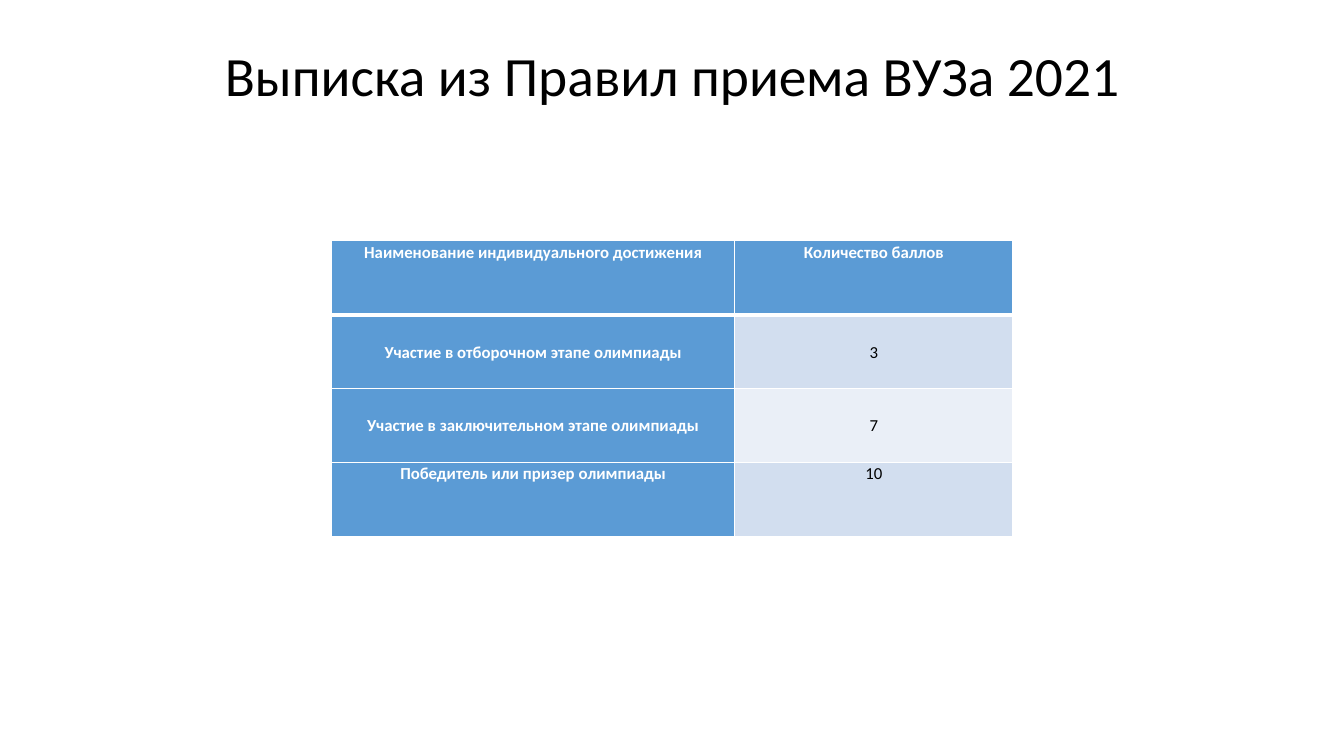
import pptx
import pptx.util
import pptx.dml.color
import pptx.enum.text
import pptx.oxml
import pptx.oxml.ns

# Content
TITLE = "Выписка из Правил приема ВУЗа 2021"
ACHIEVEMENTS = [
    ("Наименование индивидуального достижения", "Количество баллов"),
    ("Участие в отборочном этапе олимпиады", "3"),
    ("Участие в заключительном этапе олимпиады", "7"),
    ("Победитель или призер олимпиады", "10"),
]
MIDDLE_ROWS = (1, 2)
COLUMN_WIDTHS = (10.16, 7.01)
ROW_HEIGHT = 1.86
COLORS = {
    "ink": "000000",
    "border": "FFFFFF",
    "header": "5B9BD5",
    "header text": "FFFFFF",
    "odd row": "D2DEEF",
    "even row": "EAEFF7",
}
FONT = "Calibri"


def cm(length):
    return pptx.util.Cm(length)


def color(name):
    return pptx.dml.color.RGBColor.from_string(COLORS[name])


def write(frame, text, size, color_name, bold, spacing):
    frame.text = text
    paragraph = frame.paragraphs[0]
    paragraph.alignment = pptx.enum.text.PP_ALIGN.CENTER
    paragraph.line_spacing = spacing
    font = paragraph.runs[0].font
    font.name, font.size, font.bold = FONT, pptx.util.Pt(size), bold
    font.color.rgb = color(color_name)


def add_borders(cell, widths):
    properties = cell._tc.get_or_add_tcPr()
    for position, (side, width) in enumerate(widths.items()):
        properties.insert(position, pptx.oxml.parse_xml(
            f'<a:ln{side} {pptx.oxml.ns.nsdecls("a")} w="{pptx.util.Pt(width)}">'
            f'<a:solidFill><a:srgbClr val="{COLORS["border"]}"/></a:solidFill>'
            f'</a:ln{side}>'))


presentation = pptx.Presentation()
presentation.slide_width, presentation.slide_height = cm(33.87), cm(19.05)
slide = presentation.slides.add_slide(presentation.slide_layouts[6])

# Title
title = slide.shapes.add_textbox(cm(2.34), cm(1.02), cm(29.21), cm(1.93)).text_frame
title.word_wrap = True
title.vertical_anchor = pptx.enum.text.MSO_ANCHOR.MIDDLE
write(title, TITLE, 39.6, "ink", False, 0.9)

# Points table
points = slide.shapes.add_table(
    len(ACHIEVEMENTS), len(COLUMN_WIDTHS), cm(8.36), cm(6.07),
    cm(sum(COLUMN_WIDTHS)), cm(ROW_HEIGHT * len(ACHIEVEMENTS))).table
for column, width in zip(points.columns, COLUMN_WIDTHS):
    column.width = cm(width)

for row, achievement in enumerate(ACHIEVEMENTS):
    points.rows[row].height = cm(ROW_HEIGHT)
    for column, text in enumerate(achievement):
        cell = points.cell(row, column)
        is_header = row == 0 or column == 0
        band = "odd row" if row % 2 else "even row"
        cell.margin_left = cell.margin_right = cm(0.18)
        cell.margin_top = cell.margin_bottom = 0
        cell.vertical_anchor = (pptx.enum.text.MSO_ANCHOR.MIDDLE if row in MIDDLE_ROWS
                                else pptx.enum.text.MSO_ANCHOR.TOP)
        cell.fill.solid()
        cell.fill.fore_color.rgb = color("header" if is_header else band)
        write(cell.text_frame, text, 12, "header text" if is_header else "ink",
              is_header, 1.07)
        add_borders(cell, {"L": 1, "R": 1, "T": 3 if row == 1 else 1,
                           "B": 3 if row == 0 else 1})

presentation.save("out.pptx")
